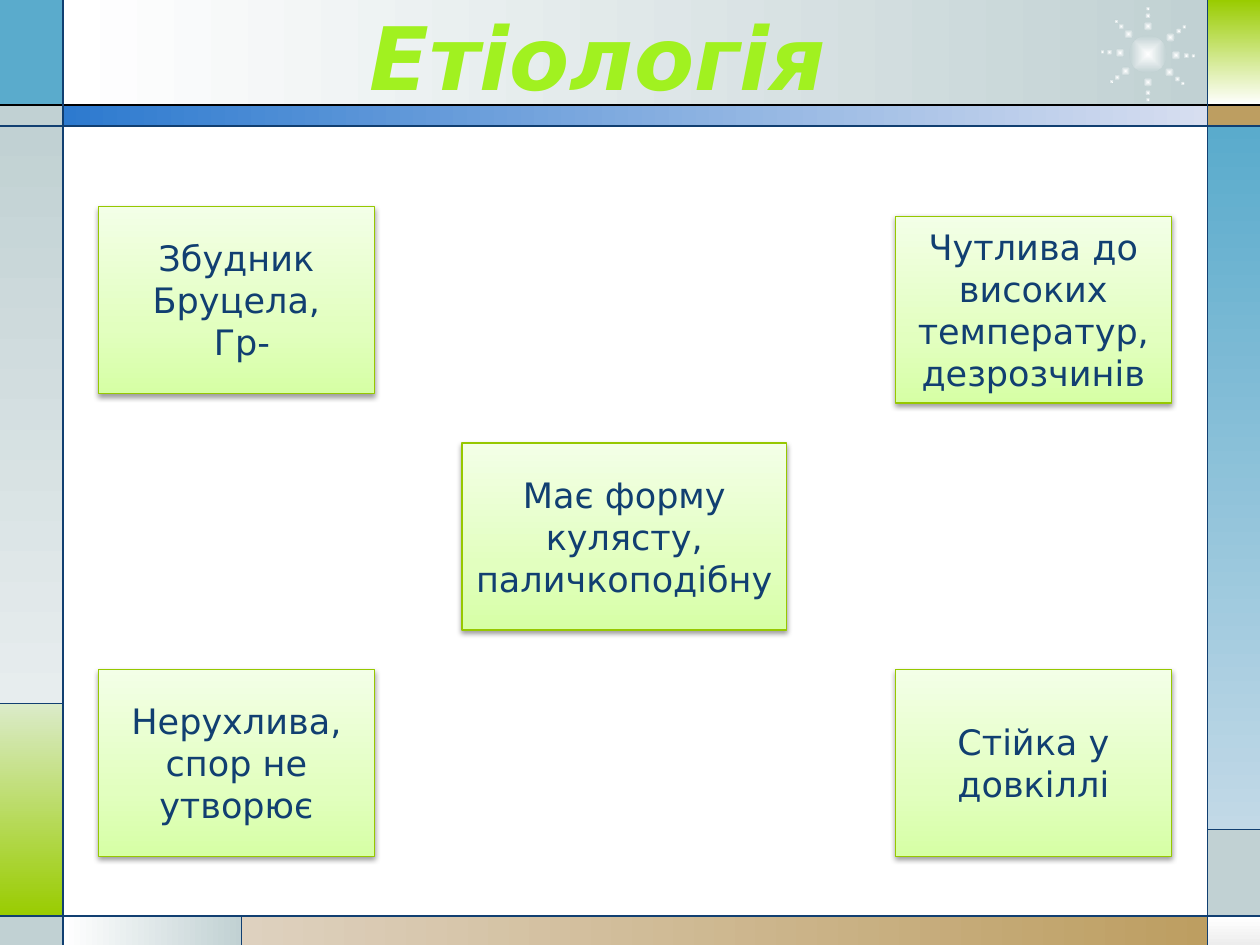
from math import cos, radians, sin

from pptx import Presentation
from pptx.dml.color import RGBColor
from pptx.enum.shapes import MSO_CONNECTOR, MSO_SHAPE
from pptx.enum.text import MSO_ANCHOR, PP_ALIGN
from pptx.oxml import parse_xml
from pptx.oxml.ns import nsdecls, qn
from pptx.util import Pt

RECT, OVAL = MSO_SHAPE.RECTANGLE, MSO_SHAPE.OVAL
LINE = MSO_CONNECTOR.STRAIGHT
MIDDLE, CENTER = MSO_ANCHOR.MIDDLE, PP_ALIGN.CENTER

THEME = {
    "font": "DejaVu Sans", "title_size": 50, "card_size": 20,
    "navy": "113F71", "black": "000000", "edge": "96C800",
    "blue": "5AABCC", "grey": "C1D1D3", "tan": "BD9E61",
    "silver": [(0, "FFFFFF"), (100, "C1D1D3")],
    "mist": [(0, "C1D1D3"), (100, "E7EDEE")],
    "green": [(0, "DBEBC9"), (100, "99CC00")],
    "lime": [(0, "99CC00"), (100, "FFFFFF")],
    "sand": [(0, "DED1BF"), (100, "BD9E61")],
    "pale": [(0, "FFFFFF"), (100, "EDEDED")],
    "sky": [(0, "5AABCC"), (100, "C2D9E7")],
    "band": [(0, "2D7ACF"), (100, "D7DEF0")],
    "card": [(0, "D6FFA5"), (35, "E2FFBF"), (100, "F3FFE7")],
    "title": [(0, "455C00"), (78, "A1F120"), (100, "F5FDEC")],
}


def paint(fill, holder, color, angle=None):
    """Fill with a solid colour, or with stops: linear at an angle, else from the centre."""
    if isinstance(color, str):
        fill.solid()
        fill.fore_color.rgb = RGBColor.from_string(color)
        return
    stops = "".join(f'<a:gs pos="{pos * 1000}"><a:srgbClr val="{rgb}"/></a:gs>'
                    for pos, rgb in color)
    if angle is None:
        shade = ('<a:path path="shape"><a:fillToRect l="50000" t="50000" '
                 'r="50000" b="50000"/></a:path>')
    else:
        shade = f'<a:lin ang="{angle * 60000}" scaled="0"/>'
    fill.background()
    holder.replace(holder.find(qn("a:noFill")), parse_xml(
        f'<a:gradFill {nsdecls("a")} rotWithShape="1"><a:gsLst>{stops}</a:gsLst>'
        f'{shade}</a:gradFill>'))


def add_shape(kind, box, color, angle=None):
    sp = slide.shapes.add_shape(kind, *[Pt(v) for v in box])
    sp.shadow.inherit = False
    sp.line.fill.background()
    paint(sp.fill, sp._element.spPr, THEME[color], angle)
    return sp


prs = Presentation()
prs.slide_width, prs.slide_height = Pt(720), Pt(540)
slide = prs.slides.add_slide(prs.slide_layouts[6])

# Frame: the rules between its tiles
LEFT, RIGHT, WIDTH = 36, 690, 720
HEAD, BODY, FOOT, HEIGHT = 60, 72, 523.5, 540
GREEN_TOP, GREY_TOP, SAND_LEFT = 402, 474, 138

# Tiles: left, top, right, bottom, fill, angle
tiles = [
    (LEFT, 0, RIGHT, HEAD, "silver", 0),
    (0, 0, LEFT, HEAD, "blue", None),
    (0, HEAD, LEFT, BODY, "grey", None),
    (0, BODY, LEFT, GREEN_TOP, "mist", 90),
    (0, GREEN_TOP, LEFT, FOOT, "green", 90),
    (0, FOOT, LEFT, HEIGHT, "grey", None),
    (LEFT, FOOT, SAND_LEFT, HEIGHT, "silver", 0),
    (SAND_LEFT, FOOT, RIGHT, HEIGHT, "sand", 0),
    (RIGHT, FOOT, WIDTH, HEIGHT, "pale", 90),
    (RIGHT, GREY_TOP, WIDTH, FOOT, "grey", None),
    (RIGHT, BODY, WIDTH, GREY_TOP, "sky", 90),
    (RIGHT, HEAD, WIDTH, BODY, "tan", None),
    (RIGHT, 0, WIDTH, HEAD, "lime", 90),
    (LEFT, HEAD, RIGHT, BODY, "band", 0),
]
for x1, y1, x2, y2, color, angle in tiles:
    add_shape(RECT, (x1, y1, x2 - x1, y2 - y1), color, angle)

# Sunburst: a core and eight rays of three shrinking dots
CX, CY, CORE = 656, 31, 21.6
add_shape(OVAL, (CX - CORE / 2, CY - CORE / 2, CORE, CORE), "silver")
for ray in (2, 40, 90, 143, 183, 226, 270, 323):
    for radius, size in ((16, 5.4), (22, 3.4), (26, 2.5)):
        x = CX + radius * cos(radians(ray)) - size / 2
        y = CY + radius * sin(radians(ray)) - size / 2
        add_shape(OVAL, (x, y, size, size), "silver")

rules = [
    (0, HEAD, WIDTH, HEAD, "black"),
    (0, BODY, WIDTH, BODY, "navy"),
    (0, FOOT, WIDTH, FOOT, "navy"),
    (LEFT, 0, LEFT, HEIGHT, "navy"),
    (RIGHT, 0, RIGHT, HEIGHT, "navy"),
    (LEFT, GREEN_TOP, 0, GREEN_TOP, "navy"),
    (SAND_LEFT, FOOT, SAND_LEFT, HEIGHT, "navy"),
    (RIGHT, GREY_TOP, WIDTH, GREY_TOP, "navy"),
]
for *ends, color in rules:
    rule = slide.shapes.add_connector(LINE, *[Pt(v) for v in ends])
    rule.line.width = Pt(0.75)
    rule.line.color.rgb = RGBColor.from_string(THEME[color])
    rule._element.spPr.append(parse_xml(f'<a:effectLst {nsdecls("a")}/>'))

# Title
tf = slide.shapes.add_textbox(Pt(77.8), Pt(9.4), Pt(527.8), Pt(44.6)).text_frame
tf.word_wrap = True
tf.vertical_anchor = MIDDLE
p = tf.paragraphs[0]
p.alignment = CENTER
r = p.add_run()
r.text = "Етіологія"
title_format = {"name": THEME["font"], "size": Pt(THEME["title_size"]),
                "bold": True, "italic": True}
for name, value in title_format.items():
    setattr(r.font, name, value)
paint(r.font.fill, r._r.get_or_add_rPr(), THEME["title"], 90)

# Cards: left, top, width, paragraphs
CARD_HEIGHT, CARD_WIDTH = 106.8, 157.8
LEFT_CARD, RIGHT_CARD, LOW_CARD = 56.2, 511.6, 382.5
cards = [
    (LEFT_CARD, 118, CARD_WIDTH, ["Збудник Бруцела,", " Гр-"]),
    (LEFT_CARD, LOW_CARD, CARD_WIDTH, ["Нерухлива, спор не утворює"]),
    (264, 253.2, 185.6, ["Має форму кулясту, паличкоподібну"]),
    (RIGHT_CARD, LOW_CARD, CARD_WIDTH, ["Стійка у довкіллі"]),
    (RIGHT_CARD, 123.6, CARD_WIDTH, ["Чутлива до високих температур, дезрозчинів"]),
]
card_format = {"name": THEME["font"], "size": Pt(THEME["card_size"])}
for x, y, width, texts in cards:
    sp = add_shape(RECT, (x, y, width, CARD_HEIGHT), "card", 270)
    sp.line.color.rgb = RGBColor.from_string(THEME["edge"])
    sp.line.width = Pt(0.75)
    sp._element.spPr.find(qn("a:effectLst")).append(parse_xml(
        f'<a:outerShdw {nsdecls("a")} blurRad="{Pt(3.1)}" dist="{Pt(1.6)}" '
        f'dir="5400000" rotWithShape="0"><a:srgbClr val="{THEME["black"]}">'
        '<a:alpha val="38000"/></a:srgbClr></a:outerShdw>'))
    tf = sp.text_frame
    tf.word_wrap = True
    tf.vertical_anchor = MIDDLE
    for i, text in enumerate(texts):
        p = tf.add_paragraph() if i else tf.paragraphs[0]
        p.alignment = CENTER
        r = p.add_run()
        r.text = text
        for name, value in card_format.items():
            setattr(r.font, name, value)
        r.font.color.rgb = RGBColor.from_string(THEME["navy"])

prs.save("out.pptx")
